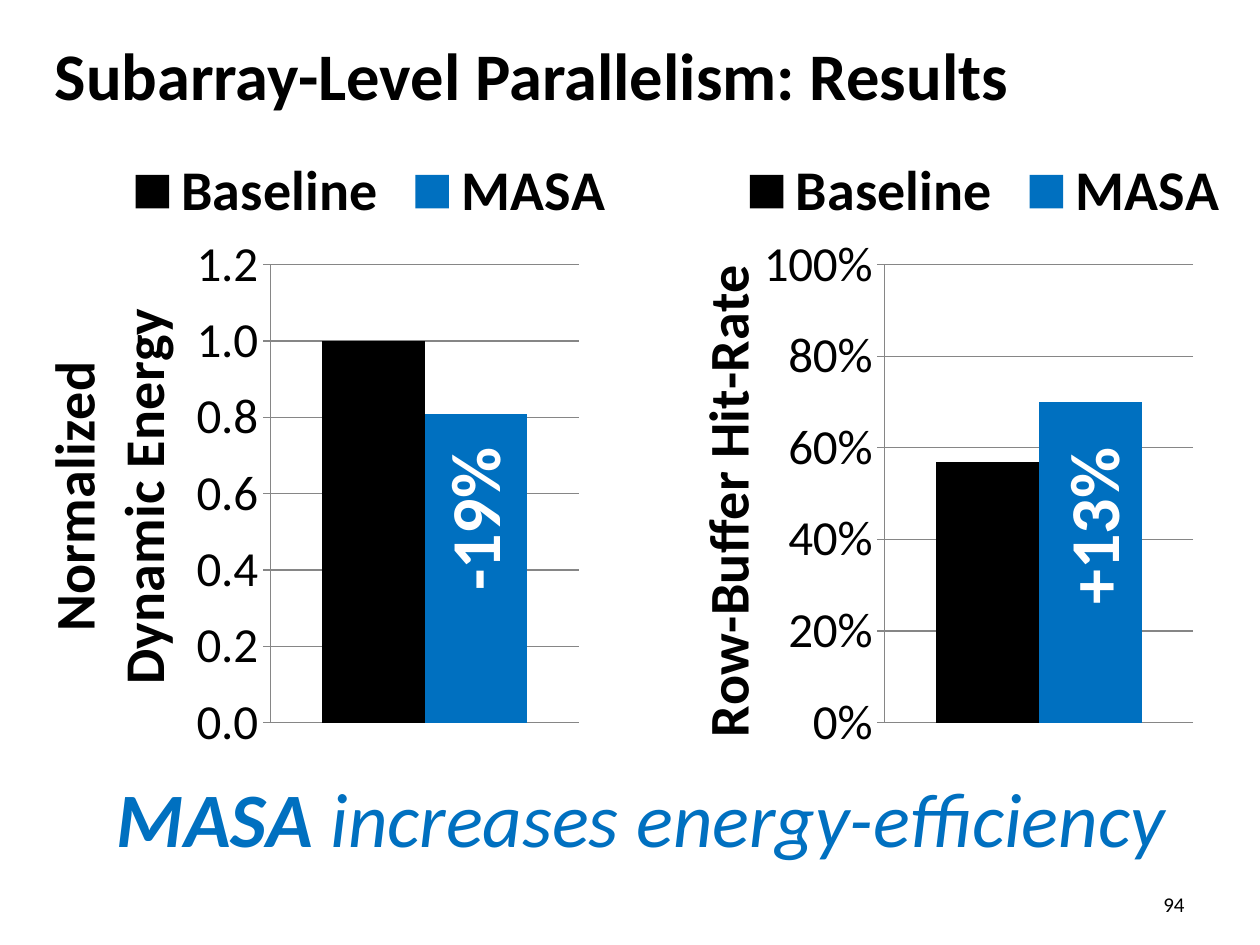
from lxml import etree
from pptx import Presentation
from pptx.chart.data import CategoryChartData
from pptx.dml.color import RGBColor
from pptx.enum.chart import XL_CHART_TYPE, XL_LEGEND_POSITION, XL_TICK_MARK
from pptx.enum.text import MSO_ANCHOR, MSO_AUTO_SIZE, PP_ALIGN
from pptx.oxml.ns import qn
from pptx.util import Pt

COLUMN = XL_CHART_TYPE.COLUMN_CLUSTERED
TOP = XL_LEGEND_POSITION.TOP
OUT, NONE = XL_TICK_MARK.OUTSIDE, XL_TICK_MARK.NONE
LEFT, MID, RIGHT = PP_ALIGN.LEFT, PP_ALIGN.CENTER, PP_ALIGN.RIGHT
MIDDLE = MSO_ANCHOR.MIDDLE
GROW = MSO_AUTO_SIZE.SHAPE_TO_FIT_TEXT

FONT = "Calibri"
BLACK, BLUE, WHITE, GRAY = "000000", "0070C0", "FFFFFF", "868686"


def color(code):
    return RGBColor.from_string(code)


def place(node, after, **parts):
    """Give a chart part a manual layout, as fractions of the chart."""
    for old in node.findall(qn("c:layout")):
        node.remove(old)
    layout = etree.Element(qn("c:layout"))
    manual = etree.SubElement(layout, qn("c:manualLayout"))
    for key, val in parts.items():
        etree.SubElement(manual, qn("c:" + key)).set("val", str(val))
    node.insert(after, layout)


class Deck:
    def __init__(self, slide):
        self.slide = slide

    def style(self, font, size, bold=False, italic=False, code=BLACK):
        font.name, font.size = FONT, Pt(size)
        font.bold, font.italic = bold, italic
        font.color.rgb = color(code)

    def add_runs(self, para, runs, size, code, italic=False):
        for text, bold in runs:
            run = para.add_run()
            run.text = text
            self.style(run.font, size, bold, italic, code)

    def title(self, box, text):
        shape = self.slide.shapes.title
        shape.left, shape.top, shape.width, shape.height = map(Pt, box)
        frame = shape.text_frame
        frame.vertical_anchor = MIDDLE
        para = frame.paragraphs[0]
        para.alignment = LEFT
        self.add_runs(para, [(text, True)], 38, BLACK)

    def text(self, box, runs, size, code, align=MID, italic=False,
             turn=0, space=1.0, grow=True):
        shape = self.slide.shapes.add_textbox(*map(Pt, box))
        shape.rotation = turn
        frame = shape.text_frame
        frame.word_wrap = True
        if grow:
            frame.auto_size = GROW
        else:
            frame.vertical_anchor = MIDDLE
        para = frame.paragraphs[0]
        para.alignment, para.line_spacing = align, space
        self.add_runs(para, runs, size, code, italic)

    def chart(self, left, lines, spot, vals, top, form):
        data = CategoryChartData()
        data.categories = ["1"]
        for name, val in zip(("Baseline", "MASA"), vals):
            data.add_series(name, [val])
        chart = self.slide.shapes.add_chart(
            COLUMN, Pt(left), Pt(78), Pt(417.6), Pt(355.7), data).chart
        self.style(chart.font, 10)
        chart.has_title = False

        # Bars
        plot = chart.plots[0]
        plot.gap_width, plot.overlap = 100, 0
        plot.vary_by_categories = False
        for series, code in zip(plot.series, (BLACK, BLUE)):
            series.format.fill.solid()
            series.format.fill.fore_color.rgb = color(code)
        area = plot._element.getparent()
        place(area, 0, layoutTarget="inner", xMode="edge", yMode="edge",
              x=0.363, y=0.206, w=0.422, h=0.736)

        # Legend
        chart.has_legend = True
        chart.legend.position = TOP
        chart.legend.include_in_layout = False
        self.style(chart.legend.font, 32, True)

        # Axes
        chart.category_axis.visible = False
        axis = chart.value_axis
        axis.minimum_scale, axis.maximum_scale, axis.major_unit = 0, top, 0.2
        axis.major_tick_mark, axis.minor_tick_mark = OUT, NONE
        axis.has_major_gridlines = True
        for line in (axis.format.line, axis.major_gridlines.format.line):
            line.color.rgb = color(GRAY)
            line.width = Pt(0.75)
        labels = axis.tick_labels
        labels.number_format, labels.number_format_is_linked = form, False
        self.style(labels.font, 28)

        # Axis title
        title = axis.axis_title
        frame = title.text_frame
        body = frame._txBody.bodyPr
        body.set("rot", "-5400000")
        body.set("vert", "horz")
        for i, line in enumerate(lines):
            para = frame.add_paragraph() if i else frame.paragraphs[0]
            self.add_runs(para, [(line, True)], 32, BLACK)
        place(title._element, 1, xMode="edge", yMode="edge",
              x=spot[0], y=spot[1])


def main():
    prs = Presentation()
    prs.slide_width, prs.slide_height = Pt(720), Pt(540)
    deck = Deck(prs.slides.add_slide(prs.slide_layouts[5]))

    # Heading and page number
    deck.title((24, 6, 672, 72), "Subarray-Level Parallelism: Results")
    deck.text((516, 504, 168, 25.2), [("94", False)], 12, BLACK, RIGHT,
              grow=False)

    # Charts
    deck.chart(3, ["Normalized", "Dynamic Energy"], (0.04, 0.27),
               (1, 0.81), 1.2, "#,##0.0")
    deck.chart(354, ["Row-Buffer Hit-Rate"], (0.08, 0.19),
               (0.57, 0.7), 1, "0%")

    # Takeaway
    deck.text((36, 443, 661, 55.4),
              [("MASA", True), (" increases energy-efficiency", False)],
              44, BLUE, italic=True, space=0.9)

    # Change shown on each blue bar
    deck.text((219, 269, 102, 55.4), [("-19%", True)], 40, WHITE, turn=270)
    deck.text((567, 273, 114, 55.4), [("+13%", True)], 40, WHITE, turn=270)

    prs.save("out.pptx")


if __name__ == "__main__":
    main()
